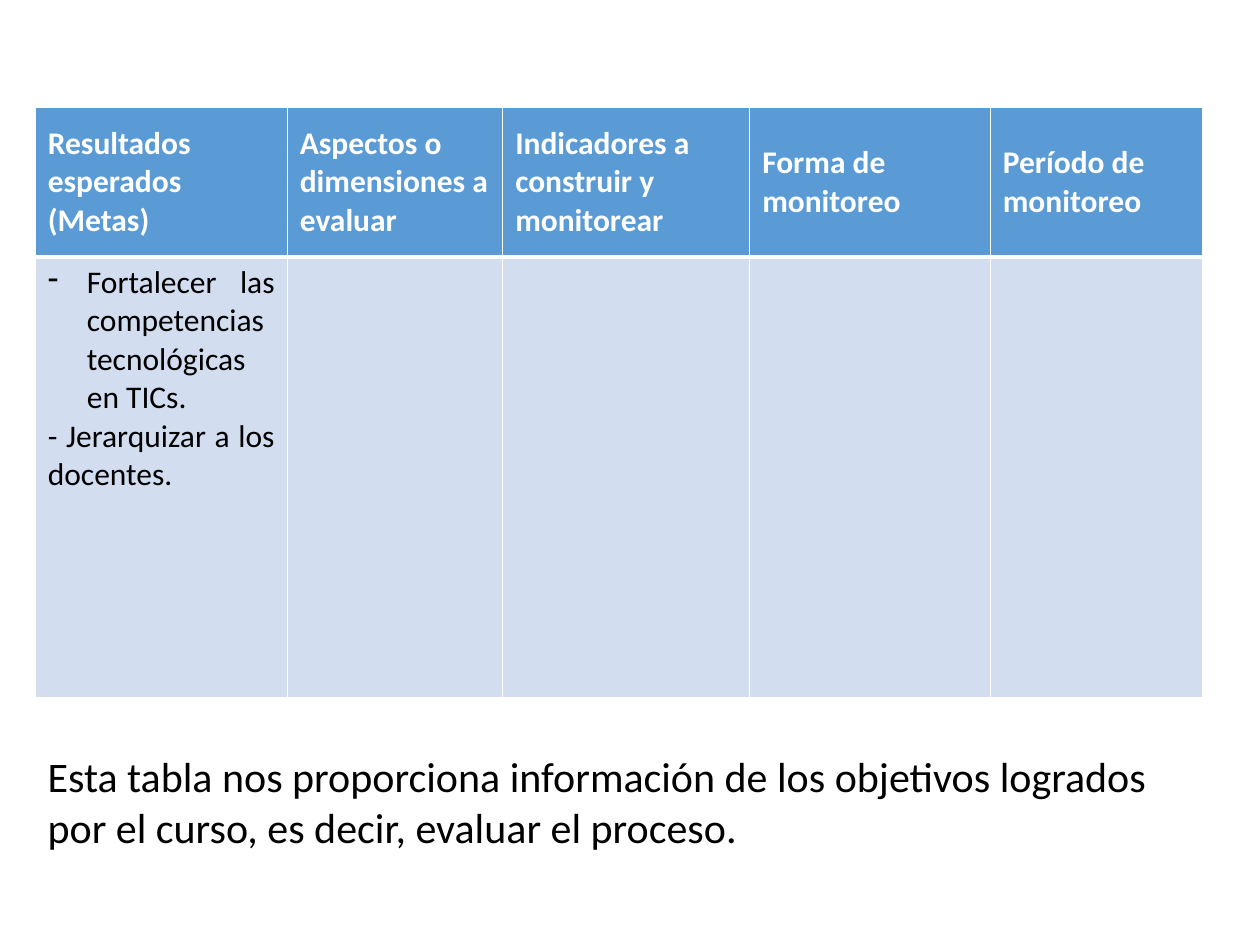
import dataclasses
import typing

import pptx
import pptx.dml.color
import pptx.enum.text
import pptx.oxml.ns
import pptx.util
from lxml import etree

Align = pptx.enum.text.PP_ALIGN
Anchor = pptx.enum.text.MSO_ANCHOR


@dataclasses.dataclass(frozen=True)
class Theme:
    font: str = "Calibri"
    header_fill: str = "5B9BD5"
    body_fill: str = "D2DEEF"
    light: str = "FFFFFF"
    dark: str = "000000"
    table_size: int = 18
    note_size: int = 24
    thin: int = 1
    thick: int = 3


@dataclasses.dataclass(frozen=True)
class Line:
    text: str
    bullet: str = ""


@dataclasses.dataclass(frozen=True)
class Column:
    heading: str
    width: float
    goals: tuple[Line, ...] = ()


THEME = Theme()
SLIDE_SIZE = (10, 7.5)
LEFT = 0.28
TABLE_TOP = 0.85
ROW_HEIGHTS = (1.19, 3.5)
NOTE_BOX = (LEFT, 5.91, 9, 0.91)
BULLET_INDENT = 0.31
COLUMNS = (
    Column("Resultados esperados (Metas)", 2, (
        Line("Fortalecer las competencias tecnológicas en TICs.", "-"),
        Line("- Jerarquizar a los docentes."),
    )),
    Column("Aspectos o dimensiones a evaluar", 1.71),
    Column("Indicadores a construir y monitorear", 1.96),
    Column("Forma de monitoreo", 1.91),
    Column("Período de monitoreo", 1.69),
)
NOTE = (
    Line("Esta tabla nos proporciona información de los objetivos logrados"),
    Line("por el curso, es decir, evaluar el proceso."),
)


def color(value: str) -> pptx.dml.color.RGBColor:
    return pptx.dml.color.RGBColor.from_string(value)


def apply_format(target: typing.Any, values: dict[str, typing.Any]) -> None:
    for name, value in values.items():
        setattr(target, name, value)


def add_bullet(para: typing.Any, mark: str) -> None:
    properties = para._p.get_or_add_pPr()
    indent = pptx.util.Inches(BULLET_INDENT)
    properties.set("marL", str(indent))
    properties.set("indent", str(-indent))
    etree.SubElement(properties, pptx.oxml.ns.qn("a:buChar"), char=mark)


def write_lines(frame: typing.Any, lines: tuple[Line, ...], size: int,
                ink: str, bold: bool, align: typing.Any) -> None:
    for index, line in enumerate(lines):
        para = frame.add_paragraph() if index else frame.paragraphs[0]
        para.alignment = align
        if line.bullet:
            add_bullet(para, line.bullet)
        span = para.add_run()
        span.text = line.text
        apply_format(span.font, {"name": THEME.font, "size": pptx.util.Pt(size), "bold": bold})
        span.font.color.rgb = color(ink)


def style_cell(cell: typing.Any, fill: str, top: int, bottom: int) -> None:
    cell.fill.solid()
    cell.fill.fore_color.rgb = color(fill)
    properties = cell._tc.get_or_add_tcPr()
    widths = {"lnL": THEME.thin, "lnR": THEME.thin, "lnT": top, "lnB": bottom}
    for index, (side, width) in enumerate(widths.items()):
        border = etree.Element(pptx.oxml.ns.qn(f"a:{side}"), w=str(pptx.util.Pt(width)))
        paint = etree.SubElement(border, pptx.oxml.ns.qn("a:solidFill"))
        etree.SubElement(paint, pptx.oxml.ns.qn("a:srgbClr"), val=THEME.light)
        properties.insert(index, border)


def add_goals_table(page: typing.Any) -> None:
    size = (sum(column.width for column in COLUMNS), sum(ROW_HEIGHTS))
    place = map(pptx.util.Inches, (LEFT, TABLE_TOP, *size))
    table = page.shapes.add_table(len(ROW_HEIGHTS), len(COLUMNS), *place).table
    table.horz_banding = False
    for row, height in zip(table.rows, ROW_HEIGHTS):
        row.height = pptx.util.Inches(height)
    for index, column in enumerate(COLUMNS):
        table.columns[index].width = pptx.util.Inches(column.width)
        header, body = table.cell(0, index), table.cell(1, index)
        style_cell(header, THEME.header_fill, THEME.thin, THEME.thick)
        style_cell(body, THEME.body_fill, THEME.thick, THEME.thin)
        header.vertical_anchor = Anchor.MIDDLE
        write_lines(header.text_frame, (Line(column.heading),), THEME.table_size,
                    THEME.light, True, Align.LEFT)
        write_lines(body.text_frame, column.goals, THEME.table_size,
                    THEME.dark, False, Align.JUSTIFY)


def add_note(page: typing.Any) -> None:
    box = page.shapes.add_textbox(*map(pptx.util.Inches, NOTE_BOX))
    apply_format(box.text_frame, {
        "word_wrap": False,
        "auto_size": pptx.enum.text.MSO_AUTO_SIZE.SHAPE_TO_FIT_TEXT,
    })
    write_lines(box.text_frame, NOTE, THEME.note_size, THEME.dark, False, Align.JUSTIFY)


def main() -> None:
    deck = pptx.Presentation()
    deck.slide_width, deck.slide_height = map(pptx.util.Inches, SLIDE_SIZE)
    page = deck.slides.add_slide(deck.slide_layouts.get_by_name("Blank"))
    add_goals_table(page)
    add_note(page)
    deck.save("out.pptx")


if __name__ == "__main__":
    main()
